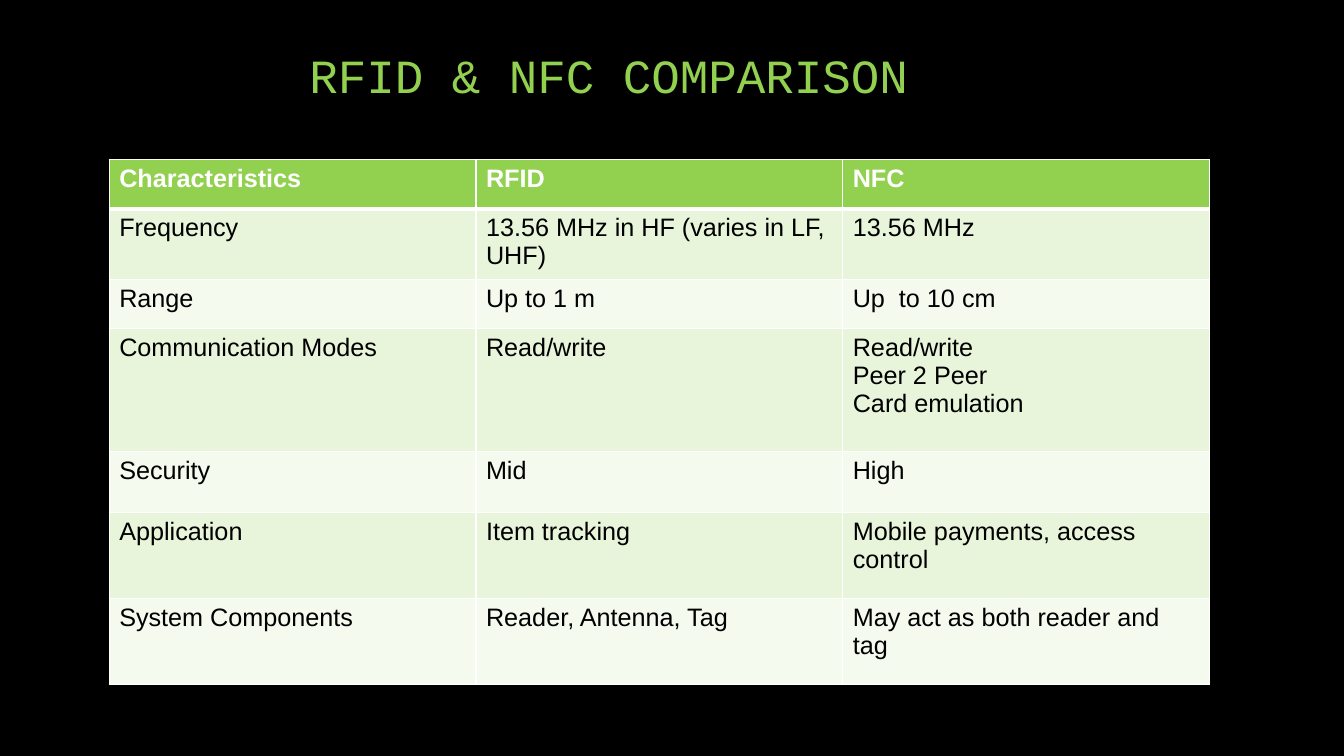
from dataclasses import dataclass

from lxml import etree
from pptx import Presentation, util as u
from pptx.dml.color import RGBColor
from pptx.enum import text
from pptx.oxml import ns

COLOURS = {
    "background": "000000",
    "accent": "92D050",
    "band_dark": "E8F5DB",
    "band_light": "F5FAEF",
    "border": "FFFFFF",
    "header_text": "FFFFFF",
    "body_text": "000000",
}

# Slide grid: 160 columns by 90 rows of square cells
GRID_COLUMNS, GRID_ROWS = 160, 90
SLIDE_WIDTH = u.Inches(40 / 3)
SLIDE_HEIGHT = u.Inches(7.5)


@dataclass(frozen=True)
class Area:
    left: float
    top: float
    width: float
    height: float


@dataclass(frozen=True)
class TextStyle:
    font: str
    size: float
    colour: str
    bold: bool = False


@dataclass(frozen=True)
class ComparisonRow:
    height: float
    cells: tuple[str, str, str]


TITLE_STYLE = TextStyle("Courier New", 34, "accent")
HEADER_STYLE = TextStyle("Arial", 18, "header_text", True)
BODY_STYLE = TextStyle("Arial", 18, "body_text")

TITLE_AREA = Area(31, 2, 83, 11)
TABLE_AREA = Area(13, 19, 131, 60)
COMPARISON = (
    ComparisonRow(5.84, ("Characteristics", "RFID", "NFC")),
    ComparisonRow(5.84, ("Frequency", "13.56 MHz in HF (varies in LF, UHF)", "13.56 MHz")),
    ComparisonRow(5.84, ("Range", "Up to 1 m", "Up  to 10 cm")),
    ComparisonRow(14.64, ("Communication Modes", "Read/write",
                          "Read/write\nPeer 2 Peer\nCard emulation")),
    ComparisonRow(7.3, ("Security", "Mid", "High")),
    ComparisonRow(10.24, ("Application", "Item tracking", "Mobile payments, access control")),
    ComparisonRow(10.24, ("System Components", "Reader, Antenna, Tag",
                          "May act as both reader and tag")),
)


def across(columns: float) -> int:
    return round(SLIDE_WIDTH * columns / GRID_COLUMNS)


def down(rows: float) -> int:
    return round(SLIDE_HEIGHT * rows / GRID_ROWS)


def place(area: Area) -> tuple[int, int, int, int]:
    return across(area.left), down(area.top), across(area.width), down(area.height)


def colour(name: str) -> RGBColor:
    return RGBColor.from_string(COLOURS[name])


def write(frame, content: str, style: TextStyle) -> None:
    """Write each line of the content as a paragraph with one run."""
    for index, line in enumerate(content.split("\n")):
        paragraph = frame.add_paragraph() if index else frame.paragraphs[0]
        run = paragraph.add_run()
        run.text = line
        run.font.name = style.font
        run.font.size = u.Pt(style.size)
        run.font.bold = style.bold
        run.font.color.rgb = colour(style.colour)


def set_borders(cell, top: float, bottom: float) -> None:
    """Border widths are in points; the borders go ahead of the cell fill."""
    properties = cell._tc.get_or_add_tcPr()
    widths = {"lnL": 1, "lnR": 1, "lnT": top, "lnB": bottom}
    for index, (side, width) in enumerate(widths.items()):
        line = etree.Element(ns.qn(f"a:{side}"), w=str(u.Pt(width)))
        fill = etree.SubElement(line, ns.qn("a:solidFill"))
        etree.SubElement(fill, ns.qn("a:srgbClr"), val=COLOURS["border"])
        properties.insert(index, line)


def add_title(slide, content: str) -> None:
    frame = slide.shapes.add_textbox(*place(TITLE_AREA)).text_frame
    frame.word_wrap = True
    frame.vertical_anchor = text.MSO_ANCHOR.BOTTOM
    write(frame, content, TITLE_STYLE)
    frame.paragraphs[0].alignment = text.PP_ALIGN.CENTER
    frame.paragraphs[0].line_spacing = 0.9


def add_comparison(slide, rows: tuple[ComparisonRow, ...]) -> None:
    column_count = len(rows[0].cells)
    table = slide.shapes.add_table(len(rows), column_count, *place(TABLE_AREA)).table
    table.horz_banding = False
    for column in table.columns:
        column.width = across(TABLE_AREA.width / column_count)

    for row_index, row in enumerate(rows):
        table.rows[row_index].height = down(row.height)
        is_header = row_index == 0
        band = "band_dark" if row_index % 2 else "band_light"
        for column_index, content in enumerate(row.cells):
            cell = table.cell(row_index, column_index)
            cell.fill.solid()
            cell.fill.fore_color.rgb = colour("accent" if is_header else band)
            set_borders(cell, top=3 if row_index == 1 else 1, bottom=3 if is_header else 1)
            write(cell.text_frame, content, HEADER_STYLE if is_header else BODY_STYLE)


def main() -> None:
    presentation = Presentation()
    presentation.slide_width = SLIDE_WIDTH
    presentation.slide_height = SLIDE_HEIGHT
    slide = presentation.slides.add_slide(presentation.slide_layouts[6])

    # Background
    slide.background.fill.solid()
    slide.background.fill.fore_color.rgb = colour("background")

    # Title and table
    add_title(slide, "RFID & NFC COMPARISON")
    add_comparison(slide, COMPARISON)
    presentation.save("out.pptx")


if __name__ == "__main__":
    main()
